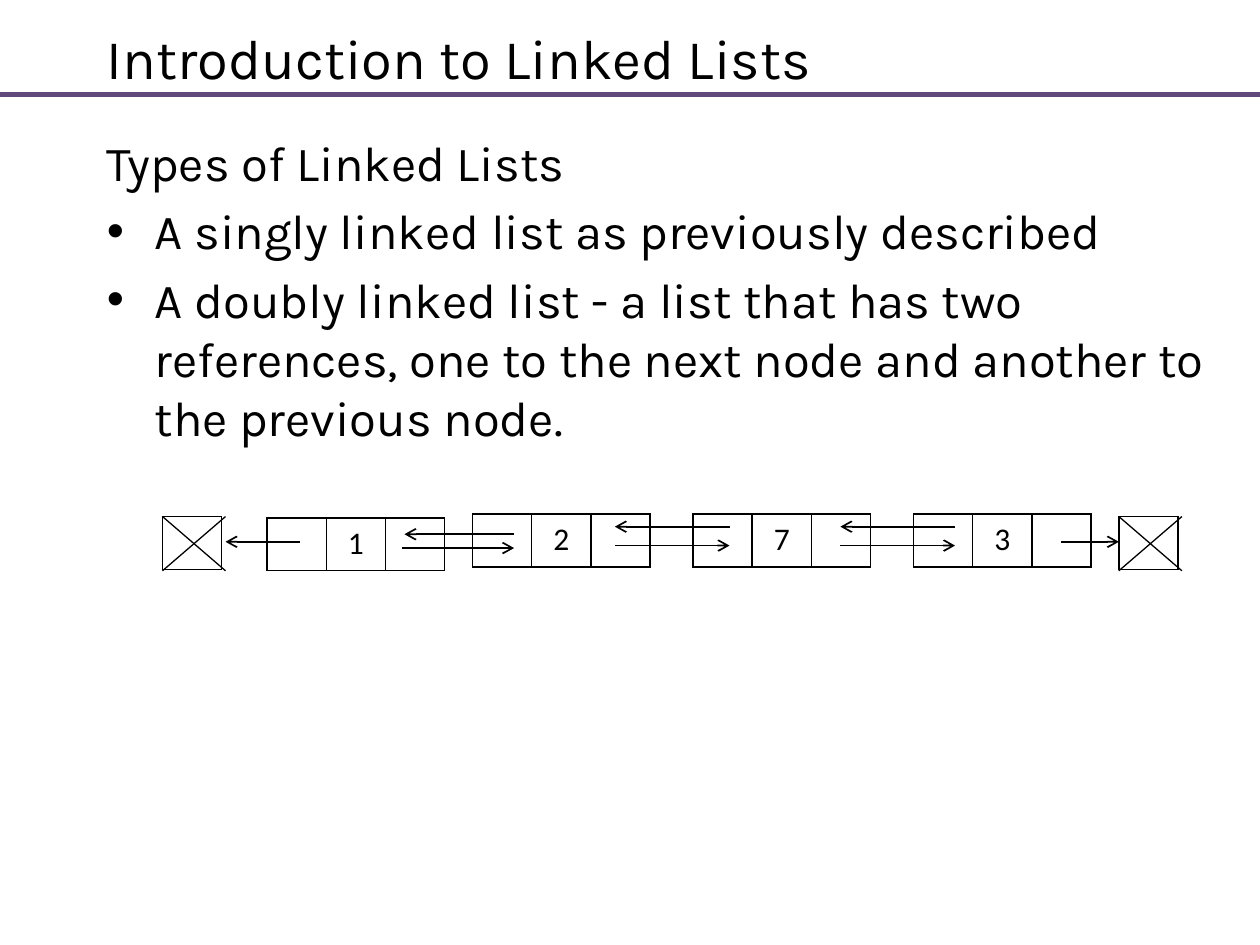
"""Build a slide that introduces doubly linked lists with a node diagram."""
from lxml.etree import SubElement
from pptx import Presentation
from pptx.dml.color import RGBColor
from pptx.enum.shapes import MSO_CONNECTOR
from pptx.enum.text import MSO_ANCHOR, PP_ALIGN
from pptx.oxml.ns import qn
from pptx.util import Inches, Pt

BLACK = RGBColor(0x00, 0x00, 0x00)
PURPLE = RGBColor(0x60, 0x4A, 0x7B)
CELL_WIDTH, CELL_HEIGHT = 0.47, 0.42


def add_line(page, start, end, color=BLACK, width=1, arrow=False):
    line = page.shapes.add_connector(
        MSO_CONNECTOR.STRAIGHT, *(Inches(value) for value in (*start, *end)))
    line.line.color.rgb = color
    line.line.width = Pt(width)
    if arrow:
        SubElement(line.line._get_or_add_ln(), qn("a:tailEnd"), type="arrow")
    SubElement(line._element.spPr, qn("a:effectLst"))


def add_cells(page, left, top, texts):
    table = page.shapes.add_table(
        1, len(texts), Inches(left), Inches(top),
        Inches(CELL_WIDTH * len(texts)), Inches(CELL_HEIGHT)).table
    table.first_row = table.horz_banding = False
    for column, text in enumerate(texts):
        table.columns[column].width = Inches(CELL_WIDTH)
        cell = table.cell(0, column)
        properties = cell._tc.get_or_add_tcPr()
        for side in ("a:lnL", "a:lnR", "a:lnT", "a:lnB"):
            border = SubElement(properties, qn(side), w=str(Pt(1)))
            fill = SubElement(border, qn("a:solidFill"))
            SubElement(fill, qn("a:srgbClr"), val=str(BLACK))
        cell.fill.background()
        para = cell.text_frame.paragraphs[0]
        para.text = text
        para.alignment = PP_ALIGN.CENTER
        para.font.size = Pt(18)
        for span in para.runs:
            span.font.size = Pt(18)
            span.font.name = "Calibri"
            span.font.color.rgb = BLACK


deck = Presentation()
deck.slide_width, deck.slide_height = Inches(10), Inches(7.5)
page = deck.slides.add_slide(deck.slide_layouts[6])

add_line(page, (0, 0.75), (10, 0.75), PURPLE, 2.5)

title = page.shapes.add_textbox(Inches(0.75), Inches(0.17), Inches(9), Inches(0.57))
title.text_frame.text = "Introduction to Linked Lists"
title.text_frame.vertical_anchor = MSO_ANCHOR.MIDDLE

body = page.shapes.add_textbox(Inches(0.75), Inches(1), Inches(9), Inches(6.33))
body.text_frame.text = "\n".join([
    "Types of Linked Lists",
    "A singly linked list as previously described",
    "A doubly linked list - a list that has two references, "
    "one to the next node and another to the previous node.",
])

for box, size in ((title, 32), (body, 28)):
    box.text_frame.word_wrap = True
    for para in box.text_frame.paragraphs:
        for span in para.runs:
            span.font.size = Pt(size)
            span.font.name = "Karla"
            span.font.color.rgb = BLACK

for para in body.text_frame.paragraphs:
    para.space_before = Pt(5.6)
for para in body.text_frame.paragraphs[1:]:
    properties = para._p.get_or_add_pPr()
    properties.set("marL", str(Inches(0.38)))
    properties.set("indent", str(Inches(-0.38)))
    SubElement(properties, qn("a:buFont"), typeface="Arial")
    SubElement(properties, qn("a:buChar"), char="•")
body.text_frame.paragraphs[-1].space_after = Pt(18)

for left, top, value in ((2.12, 4.11, "1"), (3.75, 4.08, "2"),
                         (5.5, 4.08, "7"), (7.25, 4.08, "3")):
    add_cells(page, left, top, ["", value, ""])

for left, right, back_end, next_y, back_y in ((3.19, 4.08, 3.21, 4.35, 4.24),
                                              (4.88, 5.79, 4.88, 4.33, 4.18),
                                              (6.67, 7.58, 6.67, 4.33, 4.18)):
    add_line(page, (left, next_y), (right, next_y), arrow=True)
    add_line(page, (right, back_y), (back_end, back_y), arrow=True)

for left, arrow_start, arrow_end in ((1.29, 2.38, 1.79), (8.88, 8.42, 8.88)):
    add_cells(page, left, 4.1, [""])
    add_line(page, (left, 4.1), (left + 0.5, 4.53), width=0.75)
    add_line(page, (left, 4.53), (left + 0.5, 4.1), width=0.75)
    add_line(page, (arrow_start, 4.3), (arrow_end, 4.3), arrow=True)

deck.save("out.pptx")
